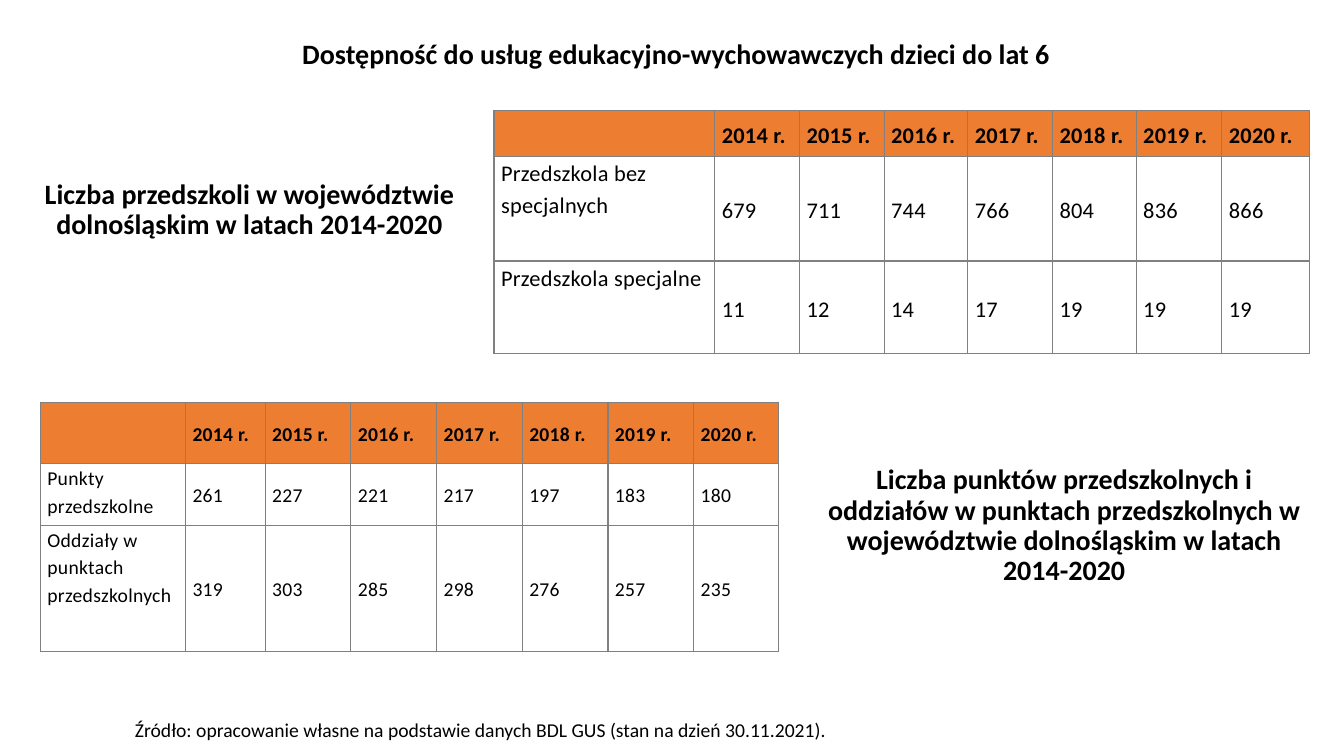
from dataclasses import dataclass

from lxml.etree import SubElement
from pptx import Presentation
from pptx.dml.color import RGBColor
from pptx.enum.text import MSO_ANCHOR as Anchor, MSO_AUTO_SIZE as AutoSize, PP_ALIGN as Align
from pptx.oxml.ns import qn
from pptx.util import Inches, Pt


@dataclass(frozen=True)
class Theme:
    font: str = "Calibri"
    ink: str = "000000"
    header: str = "ED7D31"
    body: str = "FFFFFF"
    border: str = "808080"
    heading_size: int = 20
    large_size: int = 16
    small_size: int = 14


THEME = Theme()
YEARS = [f"{year} r." for year in range(2014, 2021)]
KINDERGARTENS = [
    ("Przedszkola bez specjalnych", 679, 711, 744, 766, 804, 836, 866),
    ("Przedszkola specjalne", 11, 12, 14, 17, 19, 19, 19),
]
PRESCHOOL_POINTS = [
    ("Punkty przedszkolne", 261, 227, 221, 217, 197, 183, 180),
    ("Oddziały w punktach przedszkolnych", 319, 303, 285, 298, 276, 257, 235),
]


def write_text(frame, text, size, bold=False, align=Align.LEFT, line_spacing=0.9,
               before=0, after=0, tracking=0):
    frame.word_wrap = True
    paragraph = frame.paragraphs[0]
    paragraph.alignment = align
    paragraph.line_spacing = line_spacing
    paragraph.space_before, paragraph.space_after = Pt(before), Pt(after)
    run = paragraph.add_run()
    run.text = text
    run.font.name, run.font.size, run.font.bold = THEME.font, Pt(size), bold
    run.font.color.rgb = RGBColor.from_string(THEME.ink)
    if tracking:
        run.font._element.set("spc", str(round(tracking * 100)))


def place_heading(shape, box, text):
    shape.left, shape.top, shape.width, shape.height = map(Inches, box)
    frame = shape.text_frame
    frame.auto_size = AutoSize.NONE
    frame.vertical_anchor = Anchor.MIDDLE
    write_text(frame, text, THEME.heading_size, bold=True, align=Align.CENTER)


def add_heading(slide, box, text):
    place_heading(slide.shapes.add_textbox(*map(Inches, box)), box, text)


def add_source_note(slide, box, text):
    shape = slide.shapes.add_textbox(*map(Inches, box))
    write_text(shape.text_frame, text, THEME.small_size, before=10)


def style_cell(cell, color):
    properties = cell._tc.get_or_add_tcPr()
    for side in ("a:lnL", "a:lnR", "a:lnT", "a:lnB"):
        line = SubElement(properties, qn(side), w=str(Pt(1)))
        fill = SubElement(line, qn("a:solidFill"))
        SubElement(fill, qn("a:srgbClr"), val=THEME.border)
    cell.fill.solid()
    cell.fill.fore_color.rgb = RGBColor.from_string(color)


def add_year_table(slide, box, records, column_widths, row_heights, size,
                   label_after, value_before, value_after):
    rows = [("", *YEARS), *records]
    frame = slide.shapes.add_table(len(rows), len(column_widths), *map(Inches, box))
    table = frame.table
    table.horz_banding = False
    for column, width in zip(table.columns, column_widths):
        column.width = Inches(width)
    for row, height in zip(table.rows, row_heights):
        row.height = Inches(height)
    for row_index, values in enumerate(rows):
        is_header = row_index == 0
        for column_index, value in enumerate(values):
            cell = table.cell(row_index, column_index)
            style_cell(cell, THEME.header if is_header else THEME.body)
            if value == "":
                continue
            is_label = column_index == 0
            cell.margin_left = cell.margin_right = Inches(0.07)
            cell.margin_top = cell.margin_bottom = 0
            cell.vertical_anchor = Anchor.TOP if is_label else Anchor.MIDDLE
            if is_header:
                before, after = 4, 4
            elif is_label:
                before, after = 4, label_after
            else:
                before, after = value_before, value_after
            write_text(cell.text_frame, str(value), size, bold=is_header,
                       line_spacing=1.15, before=before, after=after, tracking=0.2)


def build_availability_slide(presentation):
    slide = presentation.slides.add_slide(presentation.slide_layouts[5])
    place_heading(slide.shapes.title, (0.4, 0, 12.61, 1.09),
                  "Dostępność do usług edukacyjno-wychowawczych dzieci do lat 6")
    add_heading(slide, (0.33, 1.05, 4.29, 2.08),
                "Liczba przedszkoli w województwie dolnośląskim w latach 2014-2020")
    add_year_table(slide, (4.9, 1.1, 8.1, 2.41), KINDERGARTENS,
                   column_widths=(2.19, 0.84, 0.84, 0.83, 0.84, 0.83, 0.85, 0.87),
                   row_heights=(0.45, 1.04, 0.92), size=THEME.large_size,
                   label_after=4, value_before=4, value_after=4)
    add_year_table(slide, (0.4, 3.99, 7.32, 2.46), PRESCHOOL_POINTS,
                   column_widths=(1.44, 0.79, *[0.85] * 5, 0.84),
                   row_heights=(0.61, 0.61, 1.25), size=THEME.small_size,
                   label_after=6, value_before=0, value_after=6)
    add_heading(slide, (7.97, 4.18, 5.17, 2.08),
                "Liczba punktów przedszkolnych i oddziałów w punktach przedszkolnych "
                "w województwie dolnośląskim w latach 2014-2020")
    add_source_note(slide, (1.24, 7.1, 11.5, 0.4),
                    "Źródło: opracowanie własne na podstawie danych BDL GUS "
                    "(stan na dzień 30.11.2021).")


def main():
    presentation = Presentation()
    presentation.slide_width, presentation.slide_height = Inches(13.33), Inches(7.5)
    build_availability_slide(presentation)
    presentation.save("out.pptx")


if __name__ == "__main__":
    main()
